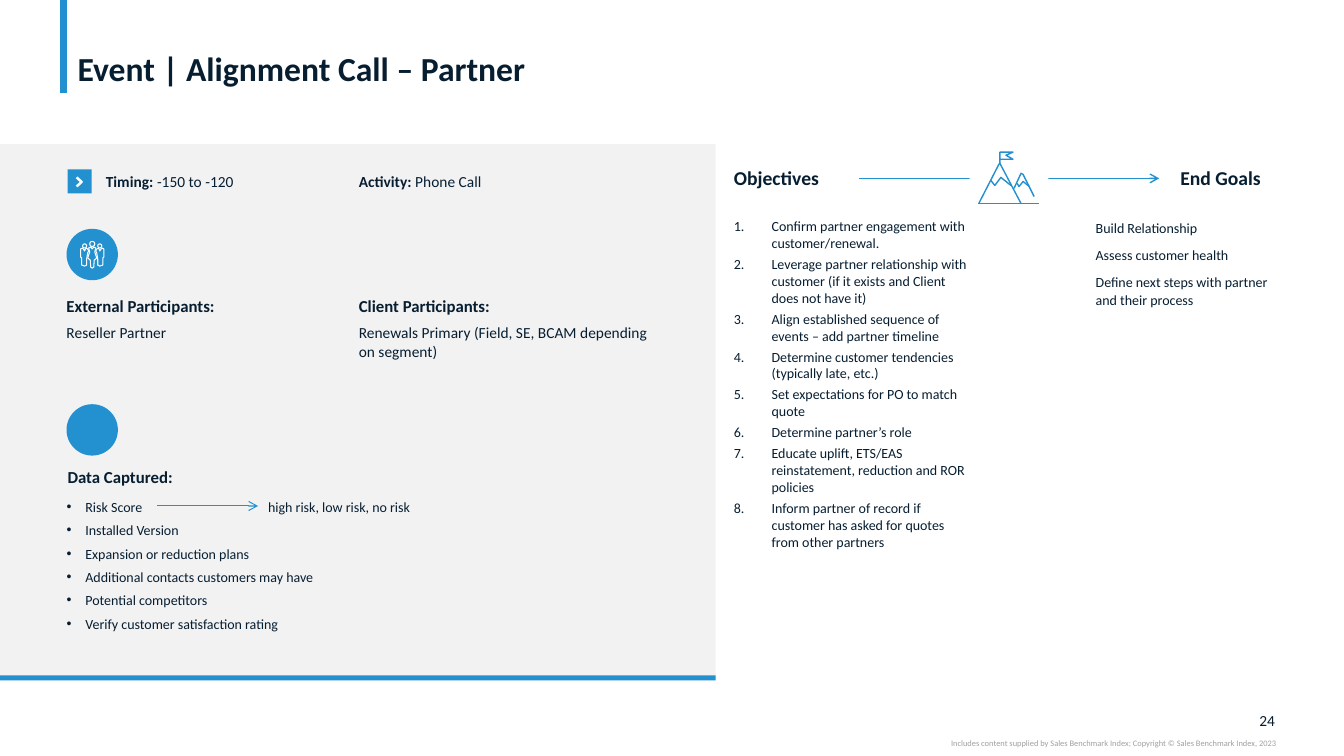
from dataclasses import dataclass

from lxml import etree
from pptx import Presentation
from pptx import util as u
from pptx.dml import color
from pptx.enum import shapes, text
from pptx.oxml import ns

COLUMNS, ROWS = 160, 90
CELL = u.Inches(7.5) // ROWS
BLUE, NAVY, PALE, WHITE, GRAY = "2391CF", "071E31", "F2F2F2", "FFFFFF", "A0A0A0"
FONT = "Calibri"
INDENT = 4.5

OBJECTIVES = [
    "Confirm partner engagement with customer/renewal.",
    "Leverage partner relationship with customer (if it exists and Client does not have it)",
    "Align established sequence of events – add partner timeline",
    "Determine customer tendencies (typically late, etc.)",
    "Set expectations for PO to match quote",
    "Determine partner’s role",
    "Educate uplift, ETS/EAS reinstatement, reduction and ROR policies",
    "Inform partner of record if customer has asked for quotes from other partners",
]
END_GOALS = [
    "Build Relationship",
    "Assess customer health",
    "Define next steps with partner and their process",
]
DATA_CAPTURED = [
    "Risk Score\thigh risk, low risk, no risk",
    "Installed Version",
    "Expansion or reduction plans",
    "Additional contacts customers may have",
    "Potential competitors",
    "Verify customer satisfaction rating",
]
PARTICIPANTS = [
    (7.92, 32.88, "External Participants:", "Reseller Partner"),
    (42.72, 36, "Client Participants:", "Renewals Primary (Field, SE, BCAM depending on segment)"),
]
FACTS = [(12.6, 18.6, "Timing: ", "-150 to -120"), (42.72, 36.36, "Activity: ", "Phone Call")]

MOUNTAIN_LINES = [
    [(1.08, 7.68), (3.48, 3), (3.6, 2.88), (3.72, 3.12), (6.12, 7.68)],
    [(5.28, 5.88), (6.12, 4.08), (6.36, 4.2), (7.68, 6.84)],
    [(2.52, 4.92), (3, 5.52), (3.72, 4.56), (4.92, 5.52)],
    [(3.6, 2.88), (3.6, 1.56), (5.16, 1.56), (4.32, 1.92), (5.16, 2.4), (3.6, 2.4)],
    [(5.64, 5.28), (5.88, 5.64), (6.36, 5.04), (7.08, 5.64)],
]
SIDE_BODY = [(2.16, 2.64), (1.92, 2.28), (1.68, 2.4), (1.68, 3.36), (1.8, 3.48), (1.8, 4.32),
             (2.16, 4.44), (2.4, 4.32), (2.4, 3.6), (2.52, 2.88), (2.64, 2.64), (2.52, 2.4),
             (2.28, 2.28)]
HALF_BODY = [(3.06, 2.4), (3.24, 2.16), (3.48, 2.28), (3.36, 2.76), (3.6, 3.48), (3.3, 3.72),
             (3.24, 4.56), (3.06, 4.68)]
CIRCLE = 6.12


@dataclass
class Box:
    left: float
    top: float
    width: float
    height: float

    def inner(self, left, top, width, height):
        return Box(self.left + left, self.top + top, width, height)

    def lengths(self):
        return [cells(n) for n in (self.left, self.top, self.width, self.height)]


def cells(count):
    return u.Emu(round(count * CELL))


def rgb(value):
    return color.RGBColor.from_string(value)


def apply(target, values):
    for name, value in values.items():
        setattr(target, name, value)


def style(shape, fill=None, line=None, width=1):
    shape.shadow.inherit = False
    if fill:
        shape.fill.solid()
        shape.fill.fore_color.rgb = rgb(fill)
    else:
        shape.fill.background()
    if line:
        shape.line.color.rgb = rgb(line)
        shape.line.width = u.Pt(width)
    else:
        shape.line.fill.background()


def add_shape(slide, box, kind="RECTANGLE", **look):
    shape = slide.shapes.add_shape(getattr(shapes.MSO_SHAPE, kind), *box.lengths())
    style(shape, **look)


def add_outline(slide, box, points, line, width, close=False):
    placed = [(cells(box.left + x), cells(box.top + y)) for x, y in points]
    builder = slide.shapes.build_freeform(*placed[0], scale=1.0)
    builder.add_line_segments(placed[1:], close=close)
    style(builder.convert_to_shape(), line=line, width=width)


def add_line(slide, start, end, width, arrow=False):
    line = slide.shapes.add_connector(
        shapes.MSO_CONNECTOR.STRAIGHT, *(cells(n) for n in (*start, *end)))
    line.line.color.rgb = rgb(BLUE)
    line.line.width = u.Pt(width)
    properties = line._element.spPr
    if arrow:
        etree.SubElement(properties.find(ns.qn("a:ln")), ns.qn("a:tailEnd"), type="arrow")
    etree.SubElement(properties, ns.qn("a:effectLst"))


def set_bullet(paragraph, bullet, indent, tab):
    properties = paragraph._p.get_or_add_pPr()
    properties.set("marL", str(cells(indent)))
    properties.set("indent", str(-cells(indent)))
    if bullet == "1.":
        etree.SubElement(properties, ns.qn("a:buFont"), typeface="+mj-lt")
        etree.SubElement(properties, ns.qn("a:buAutoNum"), type="arabicPeriod")
    elif bullet:
        etree.SubElement(properties, ns.qn("a:buFont"), typeface="Arial")
        etree.SubElement(properties, ns.qn("a:buChar"), char=bullet)
    else:
        etree.SubElement(properties, ns.qn("a:buNone"))
    if tab:
        stops = etree.SubElement(properties, ns.qn("a:tabLst"))
        etree.SubElement(stops, ns.qn("a:tab"), pos=str(cells(tab)), algn="l")


def write(slide, box, paragraphs, holder=None, size=10, ink=NAVY, bullet=None, indent=0,
          tab=None, frame_format=None, **paragraph_format):
    shape = holder or slide.shapes.add_textbox(*box.lengths())
    apply(shape, dict(zip(("left", "top", "width", "height"), box.lengths())))
    frame = shape.text_frame
    apply(frame, {"word_wrap": True, "auto_size": text.MSO_AUTO_SIZE.NONE,
                  "vertical_anchor": text.MSO_ANCHOR.TOP, "margin_left": 0, "margin_right": 0,
                  "margin_top": 0, "margin_bottom": 0, **(frame_format or {})})
    for index, runs in enumerate(paragraphs):
        paragraph = frame.paragraphs[0] if index == 0 else frame.add_paragraph()
        set_bullet(paragraph, bullet, indent, tab)
        apply(paragraph, {"alignment": text.PP_ALIGN.LEFT, "space_before": u.Pt(0),
                          "space_after": u.Pt(0), "line_spacing": 1.0, **paragraph_format})
        for words, bold in runs:
            run = paragraph.add_run()
            run.text = words
            apply(run.font, {"name": FONT, "size": u.Pt(size), "bold": bold})
            run.font.color.rgb = rgb(ink)


def plain(lines):
    return [[(line, False)] for line in lines]


def add_header(slide, box):
    add_line(slide, (box.left, box.top), (box.left, box.top + box.height), 5)
    write(slide, box.inner(0.48, 0.48, 143.88, 10.08),
          [[("Event | Alignment Call – Partner", True)]],
          slide.shapes.title, size=24, line_spacing=0.9,
          frame_format={"vertical_anchor": text.MSO_ANCHOR.BOTTOM,
                        "margin_left": cells(1.2), "margin_right": cells(1.2)})


def add_people(slide, box):
    add_shape(slide, box, "OVAL", fill=BLUE)
    mirrored = [(CIRCLE - x, y) for x, y in SIDE_BODY]
    middle = HALF_BODY + [(CIRCLE - x, y) for x, y in HALF_BODY[-2:0:-1]]
    for body in (SIDE_BODY, mirrored, middle):
        add_outline(slide, box, body, WHITE, 0.75, close=True)
    for left, top, size in ((1.92, 1.8, 0.48), (3.72, 1.8, 0.48), (2.76, 1.5, 0.6)):
        add_shape(slide, box.inner(left, top, size, size), "OVAL", line=WHITE, width=0.75)


def add_event_panel(slide, box):
    add_shape(slide, box, fill=PALE)
    chevron = box.inner(8.04, 3, 2.88, 2.88)
    add_shape(slide, chevron, fill=BLUE)
    add_outline(slide, chevron, [(1.08, 0.96), (1.68, 1.5), (1.08, 2.04)], WHITE, 1.75)
    for left, width, label, value in FACTS:
        write(slide, box.inner(left, 3.36, width, 2.28), [[(label, True), (value, False)]], size=11)
    add_people(slide, box.inner(7.92, 10.08, CIRCLE, CIRCLE))
    for left, width, label, value in PARTICIPANTS:
        write(slide, box.inner(left, 18, width, 2.4), [[(label, True)]], size=12)
        write(slide, box.inner(left, 21.36, width, 4.5), plain([value]), size=11)
    add_shape(slide, box.inner(7.92, 30.96, CIRCLE, CIRCLE), "OVAL", fill=BLUE)
    write(slide, box.inner(8.04, 38.4, 72, 2.4), [[("Data Captured:", True)]], size=12)
    write(slide, box.inner(7.92, 41.88, 72.12, 16.32), plain(DATA_CAPTURED), bullet="•",
          indent=2.25, tab=24, line_spacing=1.14, space_after=u.Pt(3))
    arrow_row = box.top + 43.08
    add_line(slide, (box.left + 18.72, arrow_row), (box.left + 30.72, arrow_row), 0.75, arrow=True)
    add_shape(slide, box.inner(0, box.height - 0.6, box.width, 0.6), fill=BLUE)


def add_mountain(slide, box):
    add_shape(slide, box, fill=WHITE)
    ground = box.top + 7.68
    add_line(slide, (box.left + 0.96, ground), (box.left + 8.28, ground), 1)
    for points in MOUNTAIN_LINES:
        add_outline(slide, box, points, BLUE, 1)


def add_goals_panel(slide, box):
    holders = slide.placeholders
    for index, left, width, heading in ((1, 0, 12.24, "Objectives"), (3, 53.16, 11.52, "End Goals")):
        write(slide, box.inner(left, 2.64, width, 2.88), [[(heading, True)]], holders[index],
              size=14, frame_format={"word_wrap": False})
    arrow_row = box.top + 4.08
    add_line(slide, (box.left + 14.88, arrow_row), (box.left + 50.64, arrow_row), 1, arrow=True)
    add_mountain(slide, box.inner(28.08, -0.6, 9.36, 9.24))
    write(slide, box.inner(0, 8.76, 28.08, 39.84), plain(OBJECTIVES), holders[2],
          bullet="1.", indent=INDENT, space_after=u.Pt(3))
    write(slide, box.inner(43.08, 8.76, 21.48, 10.92), plain(END_GOALS), holders[4],
          line_spacing=1.1, space_after=u.Pt(6))


def add_footer(slide, box):
    write(slide, box.inner(57.84, 0, 3.96, 2.28), plain(["24"]), size=11,
          alignment=text.PP_ALIGN.RIGHT)
    notice = ("Includes content supplied by Sales Benchmark Index; "
              "Copyright © Sales Benchmark Index, 2023")
    write(slide, box.inner(0, 3.24, 61.92, 1.2), plain([notice]), size=6, ink=GRAY,
          alignment=text.PP_ALIGN.RIGHT)


def main():
    presentation = Presentation()
    apply(presentation, {"slide_width": cells(COLUMNS), "slide_height": cells(ROWS)})
    slide = presentation.slides.add_slide(presentation.slide_layouts.get_by_name("Comparison"))
    add_header(slide, Box(7.56, 0, 144.36, 11.04))
    add_event_panel(slide, Box(0, 17.16, 85.2, 63.84))
    add_goals_panel(slide, Box(87.36, 17.16, 64.56, 63.84))
    add_footer(slide, Box(90, 84.6, 61.92, 4.44))
    presentation.save("out.pptx")


if __name__ == "__main__":
    main()
